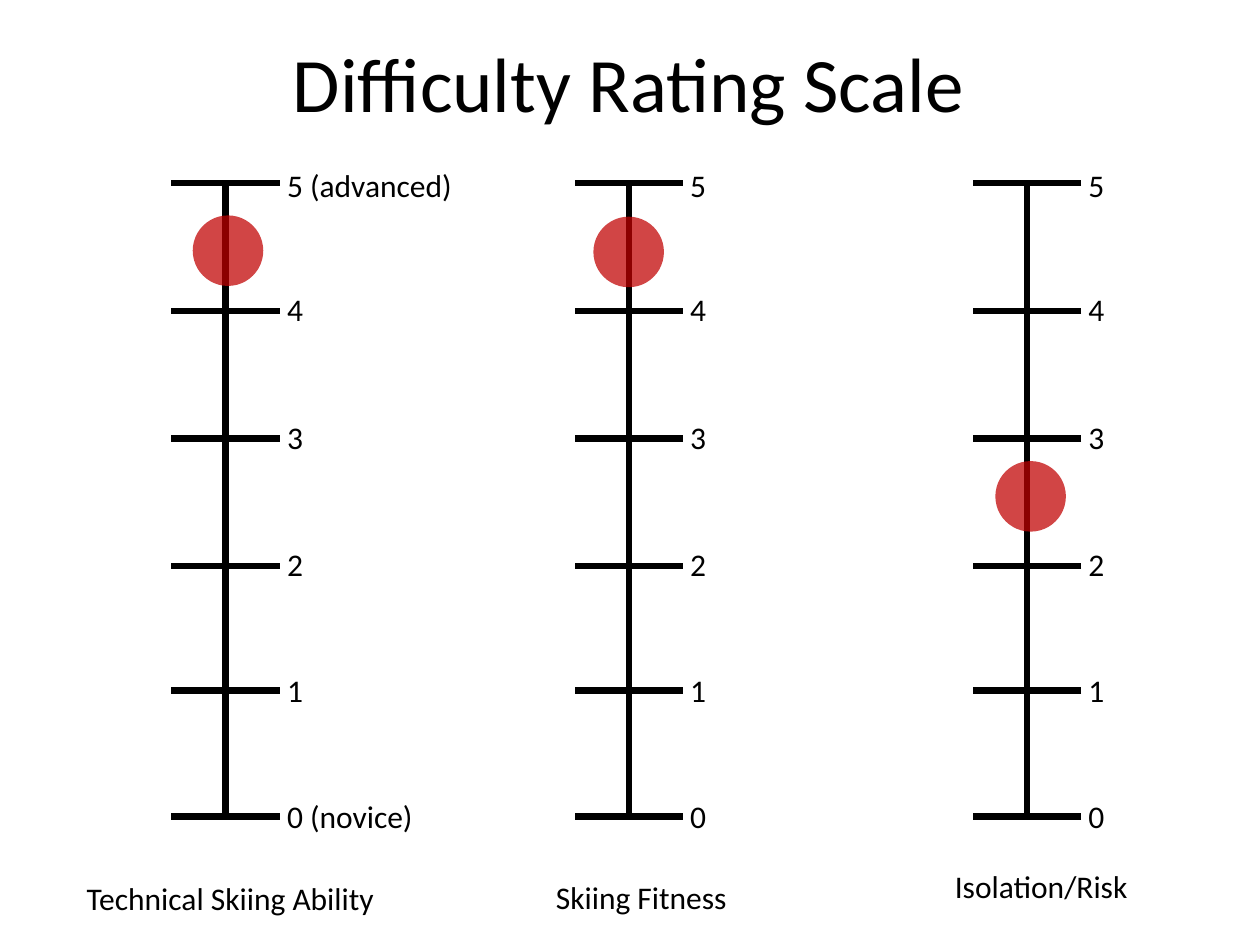
from dataclasses import dataclass

from lxml.etree import SubElement
from pptx import Presentation
from pptx.dml.color import RGBColor
from pptx.enum.shapes import MSO_CONNECTOR as Link, MSO_SHAPE as Shape
from pptx.enum.text import MSO_ANCHOR as Anchor, MSO_AUTO_SIZE as Fit, PP_ALIGN as Align
from pptx.oxml.ns import qn
from pptx.util import Inches, Pt


@dataclass(frozen=True)
class Theme:
    font: str = "Calibri"
    ink: RGBColor = RGBColor(0, 0, 0)
    mark: RGBColor = RGBColor(0xC0, 0, 0)
    alpha: int = 73
    title: float = 44
    body: float = 18
    line: float = 3.5


class Board:
    def __init__(self, slide, theme):
        self.slide = slide
        self.theme = theme

    def text(self, words, x, y, w, h=0.4, size=None, align=Align.LEFT, home=None):
        box = (home or self.slide).shapes.add_textbox(
            Inches(x), Inches(y), Inches(w), Inches(h))
        frame = box.text_frame
        frame.text = words
        frame.word_wrap = True
        frame.auto_size = Fit.NONE if size else Fit.SHAPE_TO_FIT_TEXT
        frame.vertical_anchor = Anchor.MIDDLE if size else Anchor.TOP
        para = frame.paragraphs[0]
        para.alignment = align
        font = para.runs[0].font
        font.name = self.theme.font
        font.size = Pt(size or self.theme.body)
        font.color.rgb = self.theme.ink

    def line(self, x1, y1, x2, y2, home):
        line = home.shapes.add_connector(
            Link.STRAIGHT, Inches(x1), Inches(y1), Inches(x2), Inches(y2))
        line.line.color.rgb = self.theme.ink
        line.line.width = Pt(self.theme.line)
        SubElement(line._element.spPr, qn("a:effectLst"))

    def dot(self, x, y, size=0.56):
        dot = self.slide.shapes.add_shape(
            Shape.OVAL, Inches(x), Inches(y), Inches(size), Inches(size))
        dot.shadow.inherit = False
        dot.fill.solid()
        dot.fill.fore_color.rgb = self.theme.mark
        dot.line.fill.background()
        color = dot._element.spPr.find(qn("a:solidFill"))[0]
        SubElement(color, qn("a:alpha")).set("val", str(self.theme.alpha * 1000))

    def scale(self, x, notes):
        """Draw an axis at x with one tick and label per level."""
        group = self.slide.shapes.add_group_shape()
        self.line(x, TICKS[0], x, 6.45, group)
        for level, tick, top in zip(range(5, -1, -1), TICKS, LABELS):
            self.line(x + 0.43, tick, x - 0.43, tick, group)
            note, wide = notes.get(level, ("", 0.33))
            self.text(f"{level}{note}", x + 0.39, top, wide, home=group)


# Heights of the levels, from 5 down to 0
TICKS = (1.45, 2.47, 3.48, 4.49, 5.48, 6.48)
LABELS = (1.27, 2.25, 3.27, 4.28, 5.28, 6.28)

# Axis x, level notes with label width, dot place, caption and its box
SCALES = (
    (1.79, {5: (" (advanced)", 1.65), 0: (" (novice)", 1.4)}, (1.53, 1.71),
     "Technical Skiing Ability", (0.59, 6.93, 2.74), Align.LEFT),
    (4.99, {}, (4.71, 1.72), "Skiing Fitness", (4.12, 6.92, 1.94), Align.CENTER),
    (8.15, {}, (7.9, 3.66), "Isolation/Risk", (7.48, 6.83, 1.94), Align.LEFT),
)


def main():
    deck = Presentation()
    deck.slide_width, deck.slide_height = Inches(10), Inches(7.5)
    theme = Theme()
    board = Board(deck.slides.add_slide(deck.slide_layouts[6]), theme)

    # Title
    board.text("Difficulty Rating Scale", 0.49, 0.02, 9, 1.25,
               size=theme.title, align=Align.CENTER)

    # Scales with their ratings and captions
    for x, notes, spot, name, box, align in SCALES:
        board.scale(x, notes)
        board.dot(*spot)
        board.text(name, *box, align=align)

    deck.save("out.pptx")


if __name__ == "__main__":
    main()
